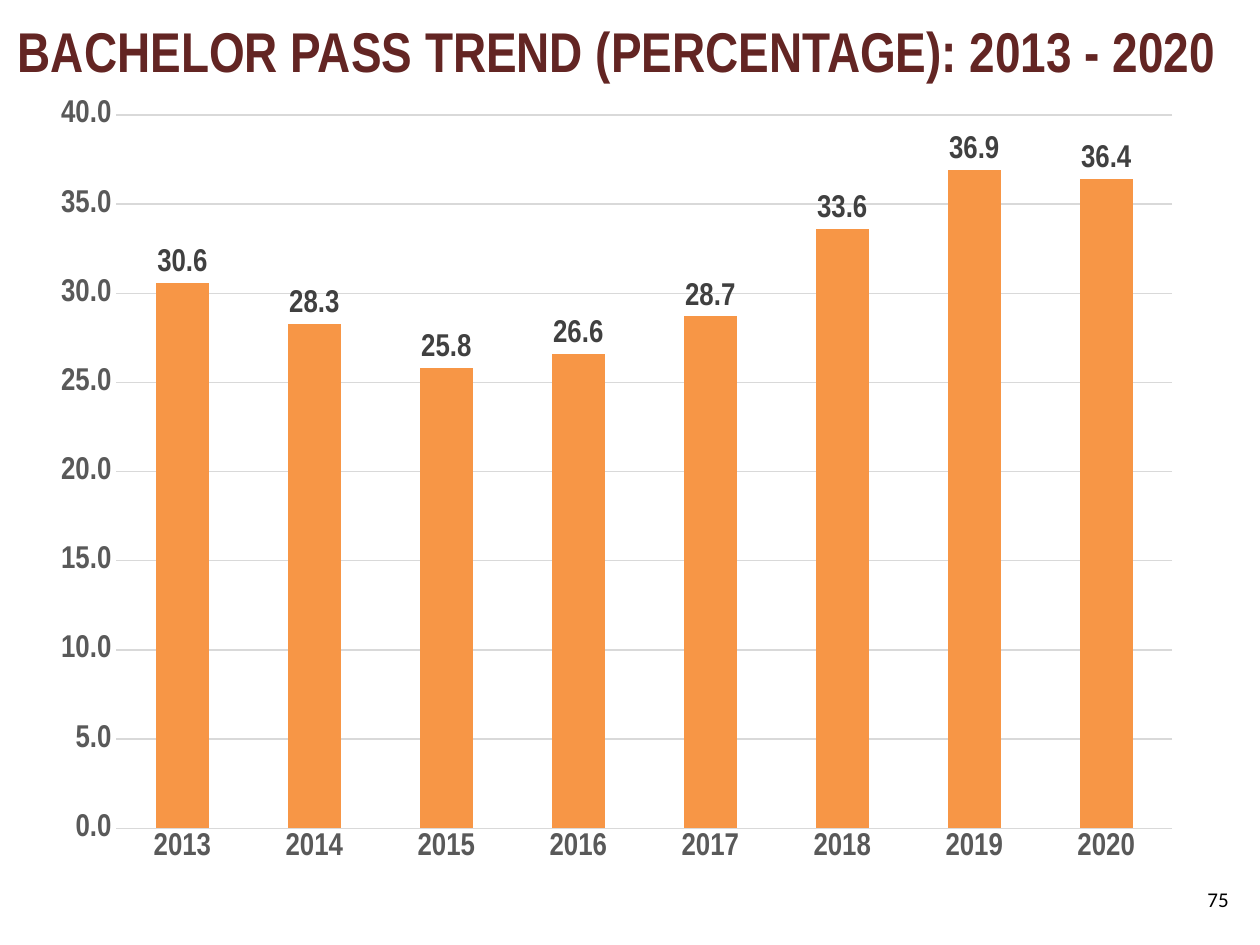
from dataclasses import dataclass

from lxml.etree import SubElement
from pptx import Presentation
from pptx.chart.data import CategoryChartData
from pptx.dml.color import RGBColor
from pptx.enum.chart import XL_CHART_TYPE as Kind
from pptx.enum.chart import XL_LABEL_POSITION as Spot
from pptx.enum.chart import XL_TICK_MARK as Tick
from pptx.enum.text import MSO_ANCHOR as Anchor
from pptx.enum.text import MSO_AUTO_SIZE as Fit
from pptx.enum.text import PP_ALIGN as Align
from pptx.oxml.ns import qn
from pptx.util import Cm, Pt

MAROON = RGBColor(0x63, 0x25, 0x23)
ORANGE = RGBColor(0xF7, 0x96, 0x46)
BLACK = RGBColor(0, 0, 0)
DARK = RGBColor(0x40, 0x40, 0x40)
GRAY = RGBColor(0x59, 0x59, 0x59)
PALE = RGBColor(0xD9, 0xD9, 0xD9)
NARROW = "Arial Narrow"


@dataclass
class Box:
    left: float
    top: float
    width: float
    height: float

    def lengths(self):
        return Cm(self.left), Cm(self.top), Cm(self.width), Cm(self.height)


@dataclass
class Rate:
    year: str
    value: float


RATES = [
    Rate("2013", 30.6), Rate("2014", 28.3), Rate("2015", 25.8), Rate("2016", 26.6),
    Rate("2017", 28.7), Rate("2018", 33.6), Rate("2019", 36.9), Rate("2020", 36.4),
]


def style(font, size=18, color=GRAY, bold=True, face=NARROW):
    font.size, font.bold, font.name = Pt(size), bold, face
    font.color.rgb = color


def write(shape, text: str, align=Align.CENTER, **look):
    frame = shape.text_frame
    frame.word_wrap = True
    frame.auto_size = Fit.NONE
    frame.vertical_anchor = Anchor.MIDDLE
    frame.margin_top = frame.margin_bottom = 0
    para = frame.paragraphs[0]
    para.alignment = align
    run = para.add_run()
    run.text = text
    style(run.font, **look)


def place_plot(chart, **parts: float):
    """Fix the inner plot area, in fractions of the chart's size."""
    area = chart.plots[0]._element.getparent()
    layout = area.find(qn("c:layout"))
    if layout is None:
        layout = SubElement(area, qn("c:layout"))
        area.insert(0, layout)
    manual = SubElement(layout, qn("c:manualLayout"))
    modes = {"layoutTarget": "inner", "xMode": "edge", "yMode": "edge"}
    for tag, value in {**modes, **parts}.items():
        SubElement(manual, qn(f"c:{tag}")).set("val", str(value))


def add_bars(slide, rates: list[Rate], box: Box):
    data = CategoryChartData(number_format="0.0")
    data.categories = [rate.year for rate in rates]
    data.add_series("Series 1", [rate.value for rate in rates])
    chart = slide.shapes.add_chart(Kind.COLUMN_CLUSTERED, *box.lengths(), data).chart
    chart.has_legend = chart.has_title = False
    style(chart.font, color=BLACK)

    for axis in (chart.category_axis, chart.value_axis):
        axis.major_tick_mark = axis.minor_tick_mark = Tick.NONE
        axis.format.line.fill.background()
        style(axis.tick_labels.font)
    scale = chart.value_axis
    scale.minimum_scale, scale.maximum_scale, scale.major_unit = 0, 40, 5
    scale.tick_labels.number_format = "0.0"
    scale.tick_labels.number_format_is_linked = False
    grid = scale.major_gridlines.format.line
    grid.color.rgb, grid.width = PALE, Pt(0.75)

    plot = chart.plots[0]
    plot.gap_width, plot.vary_by_categories = 150, False
    fill = plot.series[0].format.fill
    fill.solid()
    fill.fore_color.rgb = ORANGE
    labels = plot.series[0].data_labels
    labels.show_value, labels.position = True, Spot.OUTSIDE_END
    labels.number_format, labels.number_format_is_linked = "0.0", False
    style(labels.font, color=DARK)
    place_plot(chart, x=0.07, y=0.04, w=0.91, h=0.9)


def main():
    deck = Presentation()
    deck.slide_width, deck.slide_height = Cm(25.4), Cm(19.05)
    slide = deck.slides.add_slide(deck.slide_layouts[5])

    title = slide.shapes.title
    title.left, title.top, title.width, title.height = Box(0, 0.33, 24.89, 1.37).lengths()
    write(title, "BACHELOR PASS TREND (PERCENTAGE): 2013 - 2020", size=32, color=MAROON)

    add_bars(slide, RATES, Box(0.71, 1.68, 23.39, 15.98))

    page = slide.shapes.add_textbox(*Box(23.9, 17.73, 1.12, 0.79).lengths())
    page.text_frame.margin_left = page.text_frame.margin_right = Cm(0.25)
    write(page, "75", align=Align.RIGHT, size=12, color=BLACK, bold=False, face="Calibri")

    deck.save("out.pptx")


if __name__ == "__main__":
    main()
